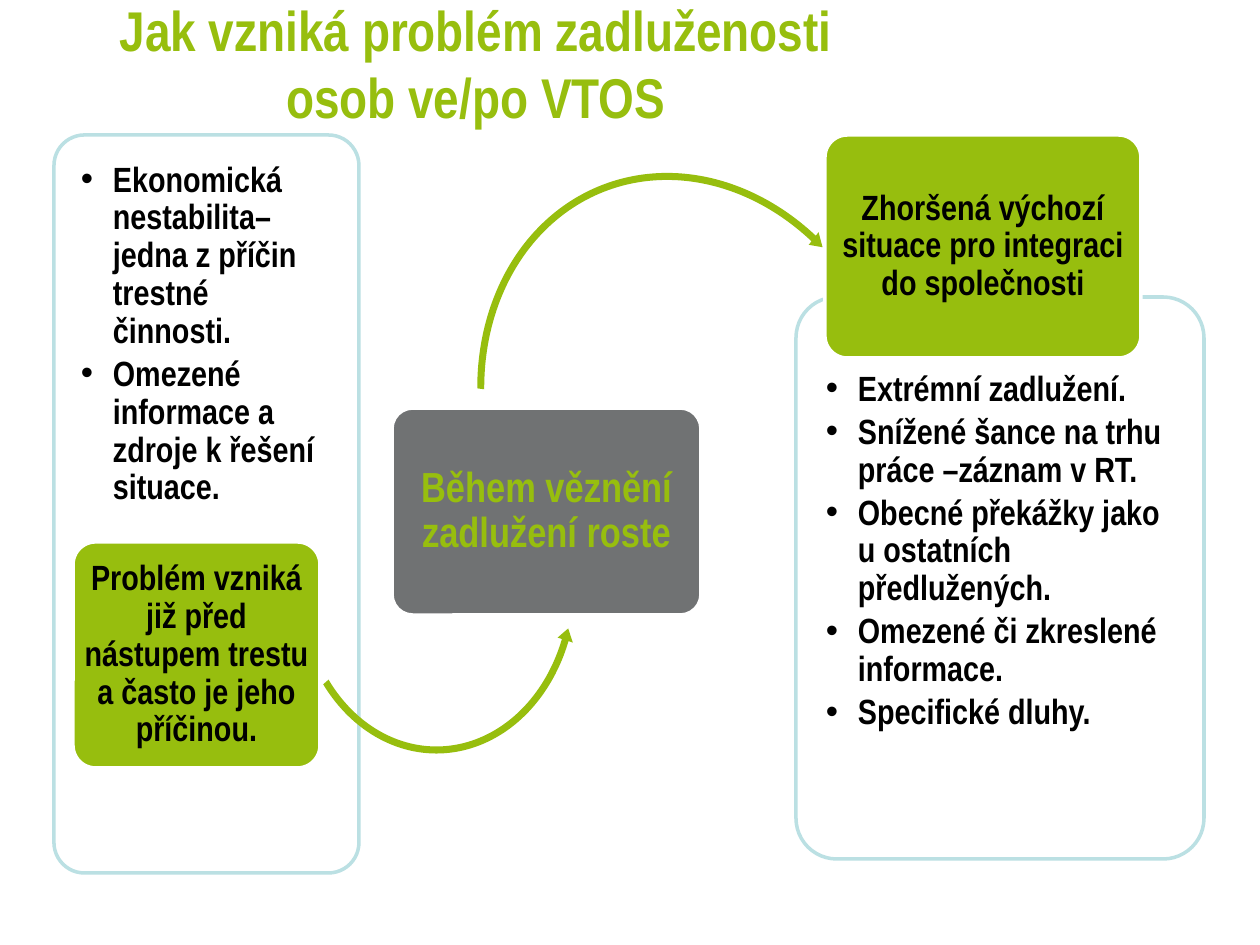
import pptx
import pptx.dml.color
import pptx.enum.shapes
import pptx.enum.text
import pptx.oxml
import pptx.oxml.ns
import pptx.util

FONT = "Arial Narrow"
GREEN, GRAY, PALE, WHITE, BLACK = "97BE0E", "707273", "BBE0E3", "FFFFFF", "000000"
SHAPES = pptx.enum.shapes.MSO_SHAPE
ANCHORS = pptx.enum.text.MSO_ANCHOR
CENTER = pptx.enum.text.PP_ALIGN.CENTER
LEFT = pptx.enum.text.PP_ALIGN.LEFT


def px(length):
    """Turn pixels, 126 to the inch, into EMU."""
    return pptx.util.Emu(round(length * 914400 / 126))


def color(value):
    """Turn a hex string into a colour."""
    return pptx.dml.color.RGBColor.from_string(value)


def add_shape(slide, kind, box, fill, line=None):
    """Add a flat preset shape in the given box."""
    shape = slide.shapes.add_shape(kind, *map(px, box))
    shape.shadow.inherit = False
    shape.fill.solid()
    shape.fill.fore_color.rgb = color(fill)
    if line:
        shape.line.color.rgb = color(line)
        shape.line.width = pptx.util.Pt(2)
    else:
        shape.line.fill.background()
    return shape


def add_rounded_box(slide, box, fill, line):
    """Add a box with corners of a tenth of its shorter side."""
    shape = add_shape(slide, SHAPES.ROUNDED_RECTANGLE, box, fill, line)
    shape.adjustments[0] = 0.1
    return shape


def format_frame(frame, anchor, insets):
    """Set anchor and left, top, right and bottom insets of a text frame."""
    frame.word_wrap = True
    frame.auto_size = pptx.enum.text.MSO_AUTO_SIZE.NONE
    frame.vertical_anchor = anchor
    (frame.margin_left, frame.margin_top,
     frame.margin_right, frame.margin_bottom) = map(px, insets)


def format_paragraph(paragraph, size, text_color, alignment):
    """Set the bold face, size, colour and alignment of a paragraph."""
    paragraph.alignment = alignment
    paragraph.font.name = FONT
    paragraph.font.size = pptx.util.Pt(size)
    paragraph.font.bold = True
    paragraph.font.color.rgb = color(text_color)


def add_bullet(paragraph):
    """Give a paragraph a hanging bullet."""
    properties = paragraph._p.get_or_add_pPr()
    properties.set("marL", str(px(32)))
    properties.set("indent", str(-px(32)))
    namespace = pptx.oxml.ns.nsdecls("a")
    properties.append(pptx.oxml.parse_xml(f'<a:buFont {namespace} typeface="Arial"/>'))
    properties.append(pptx.oxml.parse_xml(f'<a:buChar {namespace} char="•"/>'))


def add_title(slide, box, text):
    """Place and format the slide title."""
    title = slide.shapes.title
    title.left, title.top, title.width, title.height = map(px, box)
    title.text_frame.text = text
    format_frame(title.text_frame, ANCHORS.BOTTOM, (0, 6, 0, 6))
    format_paragraph(title.text_frame.paragraphs[0], 32, GREEN, CENTER)


def add_card(slide, box, text, fill=GREEN, text_color=BLACK, size=20):
    """Add a filled card with one centred statement."""
    frame = add_rounded_box(slide, box, fill, WHITE).text_frame
    frame.text = text
    format_frame(frame, ANCHORS.MIDDLE, (5, 4, 5, 4))
    paragraph = frame.paragraphs[0]
    paragraph.line_spacing = 0.9
    format_paragraph(paragraph, size, text_color, CENTER)


def add_panel(slide, box, items, top_inset):
    """Add an outlined, slightly transparent panel with a bulleted list."""
    panel = add_rounded_box(slide, box, WHITE, PALE)
    fill_color = panel._element.spPr.find(
        f"{pptx.oxml.ns.qn('a:solidFill')}/{pptx.oxml.ns.qn('a:srgbClr')}")
    fill_color.append(pptx.oxml.parse_xml(
        f'<a:alpha {pptx.oxml.ns.nsdecls("a")} val="90000"/>'))
    frame = panel.text_frame
    frame.text = "\n".join(items)
    format_frame(frame, ANCHORS.TOP, (18, top_inset, 18, 18))
    for paragraph in frame.paragraphs:
        paragraph.line_spacing = 0.9
        paragraph.space_after = pptx.util.Pt(3)
        add_bullet(paragraph)
        format_paragraph(paragraph, 20, BLACK, LEFT)


def add_curved_arrow(slide, kind, box, head_angle, end_angle, start_angle, rotation=0):
    """Add a thin circular arrow whose angles are given in degrees."""
    arrow = add_shape(slide, kind, box, GREEN)
    arrow.rotation = rotation
    side = min(box[2:])
    angles = [angle * 0.6 for angle in (head_angle, end_angle, start_angle)]
    for index, value in enumerate([7 / side, *angles, 8 / side]):
        arrow.adjustments[index] = value


def build_slide(presentation):
    """Build the slide on how indebtedness arises."""
    slide = presentation.slides.add_slide(presentation.slide_layouts[5])
    add_title(slide, (74, 16, 804, 120), "Jak vzniká problém zadluženosti osob ve/po VTOS")
    add_panel(slide, (54, 135, 305, 738), [
        "Ekonomická nestabilita–jedna z příčin trestné činnosti.",
        "Omezené informace a zdroje k řešení situace.",
    ], 18)
    add_curved_arrow(slide, SHAPES.LEFT_CIRCULAR_ARROW, (292, 413, 289, 345),
                     4.91, 22.97, 138.88)
    add_card(slide, (73, 542, 247, 226),
             "Problém vzniká již před nástupem trestu a často je jeho příčinou.")
    add_curved_arrow(slide, SHAPES.CIRCULAR_ARROW, (478, 164, 426, 503),
                     3.31, 325.44, 207.93, 339.3)
    add_card(slide, (392, 408, 309, 207), "Během věznění zadlužení roste", GRAY, GREEN, 24)
    add_panel(slide, (796, 297, 408, 562), [
        "Extrémní zadlužení.",
        "Snížené šance na trhu práce –záznam v RT.",
        "Obecné překážky jako u ostatních předlužených.",
        "Omezené či zkreslené informace.",
        "Specifické dluhy.",
    ], 62)
    add_card(slide, (825, 135, 316, 223),
             "Zhoršená výchozí situace pro integraci do společnosti")


def main():
    """Create and save the presentation."""
    presentation = pptx.Presentation()
    presentation.slide_width, presentation.slide_height = px(1260), px(945)
    build_slide(presentation)
    presentation.save("out.pptx")


if __name__ == "__main__":
    main()
